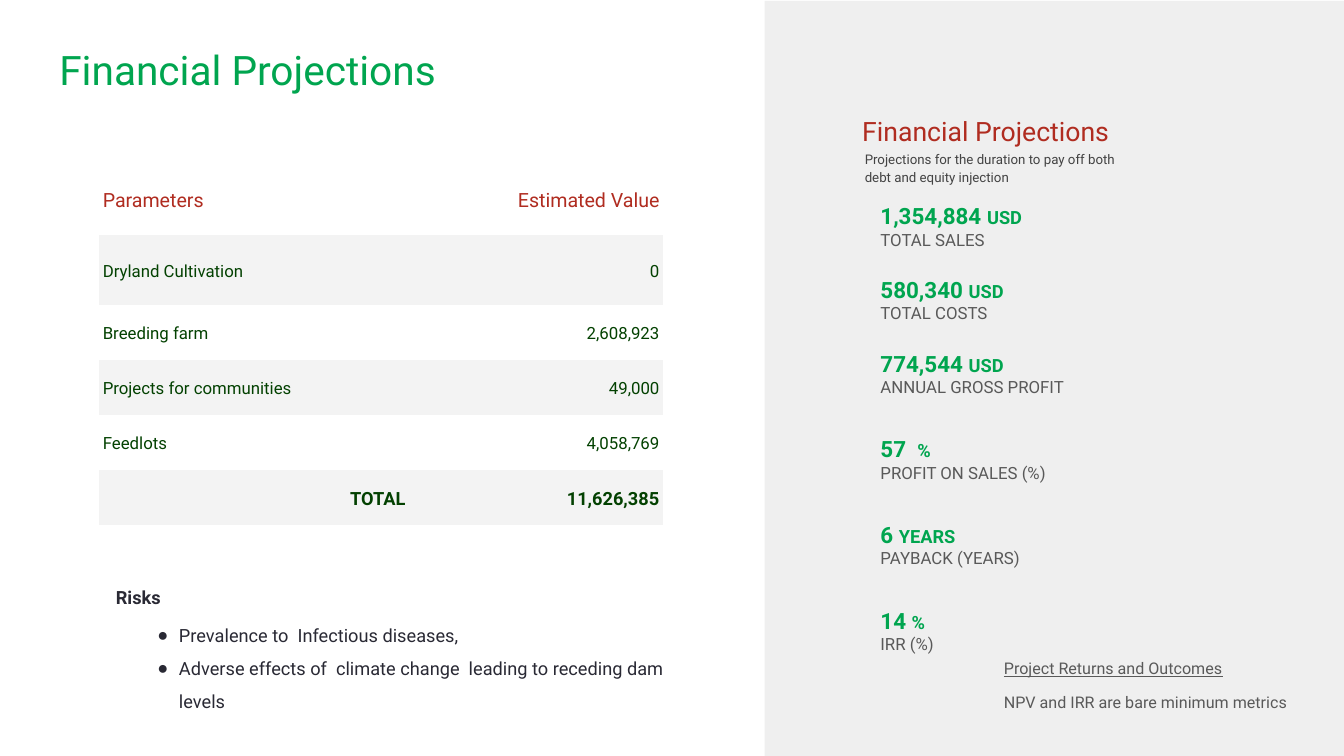
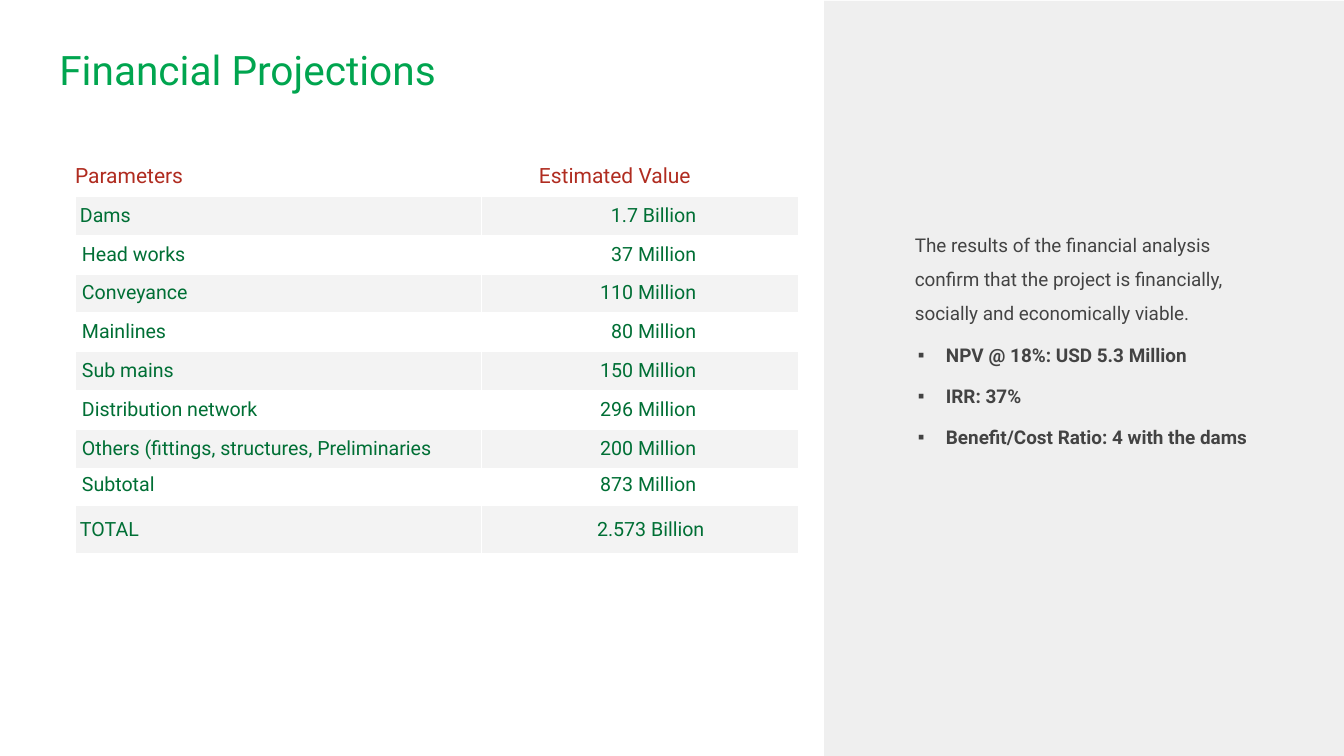
"""Build two slides of financial projections with tables, key figures and notes."""
from dataclasses import dataclass
from itertools import cycle

from lxml.etree import SubElement
from pptx import Presentation
from pptx.dml.color import RGBColor
from pptx.enum.shapes import MSO_SHAPE
from pptx.enum.text import MSO_ANCHOR, MSO_AUTO_SIZE, PP_ALIGN
from pptx.oxml import parse_xml
from pptx.oxml.ns import nsdecls, qn
from pptx.util import Cm, Pt

FONT = "Roboto"
GREEN = "00A54F"
RED = "B02C20"
DARK_GREEN = "034101"
MID_GREEN = "006F35"
GREY = "595959"
DARK_GREY = "434343"
INK = "292934"
WHITE = "FFFFFF"
BAND = "F3F3F3"
PANEL = "9E9E9E"
NO_STYLE = "{2D5ABB26-0587-4C30-8999-92F81FD0307C}"
SLIDE_WIDTH = 67.73
SLIDE_HEIGHT = 38.1


@dataclass
class Style:
    size: float
    color: str
    bold: bool = False
    underline: bool = False


def rgb(color):
    """Turn a hex string into a colour."""
    return RGBColor.from_string(color)


def place(shape, left, top, width, height):
    """Move and size a shape, in centimetres."""
    shape.left, shape.top = Cm(left), Cm(top)
    shape.width, shape.height = Cm(width), Cm(height)


def prepare_frame(frame, inset_x, inset_y, anchor=MSO_ANCHOR.TOP):
    """Set wrapping, insets and anchor of a text frame."""
    frame.word_wrap = True
    frame.auto_size = MSO_AUTO_SIZE.NONE
    frame.vertical_anchor = anchor
    frame.margin_left = frame.margin_right = Cm(inset_x)
    frame.margin_top = frame.margin_bottom = Cm(inset_y)


def set_bullet(paragraph, bullet, color, left, hanging):
    """Give a paragraph a bullet, or none, and its indents."""
    properties = paragraph._p.get_or_add_pPr()
    properties.set("marL", str(Cm(left)))
    properties.set("indent", str(-Cm(hanging)))
    if bullet is None:
        SubElement(properties, qn("a:buNone"))
        return
    bullet_color = SubElement(properties, qn("a:buClr"))
    SubElement(bullet_color, qn("a:srgbClr"), val=color)
    SubElement(properties, qn("a:buFont"), typeface="Arial")
    SubElement(properties, qn("a:buChar"), char=bullet)


def add_paragraph(frame, runs, spacing=1.0, before=0, after=0,
                  align=PP_ALIGN.LEFT, bullet=None, left=0, hanging=0):
    """Write one paragraph of (text, style) runs."""
    first = frame.paragraphs[0]
    paragraph = frame.add_paragraph() if first.runs else first
    set_bullet(paragraph, bullet, runs[0][1].color, left, hanging)
    paragraph.alignment = align
    paragraph.line_spacing = spacing
    paragraph.space_before, paragraph.space_after = Pt(before), Pt(after)
    for text, style in runs:
        run = paragraph.add_run()
        run.text = text
        run.font.name = FONT
        run.font.size = Pt(style.size)
        run.font.bold = style.bold
        run.font.underline = style.underline
        run.font.color.rgb = rgb(style.color)


def add_text_box(slide, box, inset_x, inset_y, anchor=MSO_ANCHOR.TOP):
    """Add an empty text box and return its frame."""
    frame = slide.shapes.add_textbox(*map(Cm, box)).text_frame
    prepare_frame(frame, inset_x, inset_y, anchor)
    return frame


def use_body(slide, box, inset_x, inset_y):
    """Move the body placeholder and return its frame."""
    body = slide.placeholders[1]
    place(body, *box)
    prepare_frame(body.text_frame, inset_x, inset_y)
    return body.text_frame


def add_panel(slide, left):
    """Add the translucent grey band from left to the slide edge."""
    panel = slide.shapes.add_shape(
        MSO_SHAPE.RECTANGLE, Cm(left), Cm(0.05),
        Cm(SLIDE_WIDTH - left), Cm(SLIDE_HEIGHT - 0.05))
    panel.shadow.inherit = False
    panel.fill.solid()
    panel.fill.fore_color.rgb = rgb(PANEL)
    panel.line.fill.background()
    color = panel._element.spPr.find(".//" + qn("a:srgbClr"))
    SubElement(color, qn("a:alpha"), val="16000")
    slide.shapes._spTree.insert(2, panel._element)


def add_projection_slide(presentation, panel_left, title_width):
    """Add a slide with the shared title and side panel."""
    slide = presentation.slides.add_slide(presentation.slide_layouts[1])
    title = slide.shapes.title
    place(title, 2.31, 1.6, title_width, 4.24)
    prepare_frame(title.text_frame, 0.68, 0.68)
    add_paragraph(title.text_frame, [("Financial Projections", Style(58, GREEN))])
    add_panel(slide, panel_left)
    return slide


def add_plain_table(slide, left, top, widths, heights):
    """Add a table without style and return it."""
    table = slide.shapes.add_table(
        len(heights), len(widths), Cm(left), Cm(top),
        Cm(sum(widths)), Cm(sum(heights))).table
    table.first_row = table.horz_banding = False
    table._tbl.tblPr.find(qn("a:tableStyleId")).text = NO_STYLE
    for column, width in zip(table.columns, widths):
        column.width = Cm(width)
    for row, height in zip(table.rows, heights):
        row.height = Cm(height)
    return table


def add_white_borders(cell):
    """Draw thin white lines around a cell."""
    properties = cell._tc.get_or_add_tcPr()
    for index, side in enumerate(("lnL", "lnR", "lnT", "lnB")):
        properties.insert(index, parse_xml(
            f'<a:{side} {nsdecls("a")} w="9525"><a:solidFill>'
            f'<a:srgbClr val="{WHITE}"/></a:solidFill></a:{side}>'))


def fill_cell(cell, text, style, fill, align, margins, spacing=1.0):
    """Write and colour one cell; margins are left, right and vertical."""
    left, right, vertical = map(Cm, margins)
    cell.margin_left, cell.margin_right = left, right
    cell.margin_top = cell.margin_bottom = vertical
    cell.vertical_anchor = MSO_ANCHOR.MIDDLE
    cell.fill.solid()
    cell.fill.fore_color.rgb = rgb(fill)
    if text:
        add_paragraph(cell.text_frame, [(text, style)], spacing, align=align)


def add_farm_table(slide):
    """Add the table of farm investments with its total."""
    header, entry = Style(28, RED), Style(24, DARK_GREEN)
    total = Style(26, DARK_GREEN, bold=True)
    left, right = PP_ALIGN.LEFT, PP_ALIGN.RIGHT
    rows = [
        ("Parameters", "Estimated Value", header, left),
        ("Dryland Cultivation", "0", entry, left),
        ("Breeding farm", "2,608,923", entry, left),
        ("Projects for communities", "49,000", entry, left),
        ("Feedlots", "4,058,769", entry, left),
        ("TOTAL", "11,626,385", total, right),
    ]
    table = add_plain_table(slide, 4.98, 8.26, [15.65, 12.8],
                            [3.56] * 2 + [2.77] * 4)
    for row, (name, value, style, align), fill in zip(
            table.rows, rows, cycle((WHITE, BAND))):
        for cell, text, side in zip(row.cells, (name, value), (align, right)):
            fill_cell(cell, text, style, fill, side, (0.2, 0.2, 0.15), 1.15)


def add_water_table(slide):
    """Add the table of water works costs with its total."""
    header, entry = Style(30, RED), Style(28, MID_GREEN)
    rows = [
        ("Parameters", "Estimated Value", header, 0, 5.4),
        ("Dams", "1.7 Billion", entry, 0.25, 5.13),
        ("Head works", "37 Million", entry, 0.35, 5.13),
        ("Conveyance", "110 Million", entry, 0.35, 5.13),
        ("Mainlines", "80 Million", entry, 0.35, 5.13),
        ("Sub mains", "150 Million", entry, 0.35, 5.13),
        ("Distribution network", "296 Million", entry, 0.35, 5.13),
        ("Others (fittings, structures, Preliminaries", "200 Million",
         entry, 0.35, 5.13),
        ("Subtotal", "873 Million", entry, 0.35, 5.13),
        ("TOTAL", "2.573 Billion", entry, 0.25, 4.72),
    ]
    table = add_plain_table(slide, 3.78, 7.92, [20.45, 15.98],
                            [1.96] * 8 + [1.88, 2.41])
    for row, (name, value, style, indent, gap), fill in zip(
            table.rows, rows, cycle((WHITE, BAND))):
        spacing = 0.62 if name == "Subtotal" else 1.0
        name_cell, value_cell = row.cells
        fill_cell(name_cell, name, style, fill, PP_ALIGN.LEFT,
                  (indent, 0, 0), spacing)
        fill_cell(value_cell, value, style, fill, PP_ALIGN.RIGHT,
                  (0, gap, 0), spacing)
        add_white_borders(name_cell)
        add_white_borders(value_cell)


def add_key_figures(slide):
    """Stack the key figures down the side panel."""
    figures = [
        ("1,354,884 ", "USD", "TOTAL SALES", 2.95),
        ("580,340 ", "USD", "TOTAL COSTS", 2.95),
        ("774,544 ", "USD", "ANNUAL GROSS PROFIT", 3.56),
        ("57  ", "%", "PROFIT ON SALES (%)", 3.56),
        ("6 ", "YEARS", "PAYBACK (YEARS)", 3.56),
        ("14 ", "%", "IRR (%)", 3.56),
    ]
    top = 9.86
    for number, unit, label, height in figures:
        frame = add_text_box(slide, (43.69, top, 13.13, height), 0.68, 0.34)
        add_paragraph(frame, [(number, Style(32, GREEN, bold=True)),
                              (unit, Style(26, GREEN, bold=True))])
        add_paragraph(frame, [(label, Style(24, GREY))])
        top += height + 0.76


def add_panel_notes(slide):
    """Add the heading, subheading and closing note of the side panel."""
    heading = add_text_box(slide, (42.77, 4.88, 21.06, 3), 0.68, 0.68)
    add_paragraph(heading, [("Financial Projections", Style(38, RED))], 1.15)
    subheading = add_text_box(slide, (43.33, 7.49, 13.54, 1.88), 0.25, 0.25,
                              MSO_ANCHOR.MIDDLE)
    add_paragraph(subheading, [(
        "Projections for the duration to pay off both debt and equity injection",
        Style(19, DARK_GREY))], 1.15)
    note = add_text_box(slide, (50.34, 32.44, 16.28, 3.25), 0.25, 0.25)
    add_paragraph(note, [("Project Returns and Outcomes",
                          Style(23, GREY, underline=True))], 1.5)
    add_paragraph(note, [("NPV and IRR are bare minimum metrics",
                          Style(23, GREY))], 1.5, before=8)


def add_risks(slide):
    """Write the list of risks in the body placeholder."""
    frame = use_body(slide, (5.59, 28.75, 29.36, 6.91), 0.25, 0.25)
    add_paragraph(frame, [("Risks", Style(26, INK, bold=True))], 1.5)
    risks = [
        ("Prevalence to  Infectious diseases,", 8),
        ("Adverse effects of  climate change  leading to receding dam levels", 0),
    ]
    for risk, before in risks:
        add_paragraph(frame, [(risk, Style(26, INK))], 1.5, before,
                      bullet="●", left=3.18, hanging=1.09)


def add_results(slide):
    """Write the results of the analysis in the body placeholder."""
    frame = use_body(slide, (45.59, 10.97, 18.21, 15.52), 0.51, 0.25)
    add_paragraph(frame, [(
        "The results of the financial analysis confirm that the project is "
        "financially, socially and economically viable.",
        Style(27, DARK_GREY))], 1.5)
    for result in ("NPV @ 18%: USD 5.3 Million", "IRR: 37%",
                   "Benefit/Cost Ratio: 4 with the dams"):
        add_paragraph(frame, [(result, Style(27, DARK_GREY, bold=True))], 1.5,
                      before=10, bullet="▪", left=1.57, hanging=1.42)


def main():
    """Build and save the presentation."""
    presentation = Presentation()
    presentation.slide_width = Cm(SLIDE_WIDTH)
    presentation.slide_height = Cm(SLIDE_HEIGHT)

    farm_slide = add_projection_slide(presentation, 38.53, 63.12)
    add_farm_table(farm_slide)
    add_key_figures(farm_slide)
    add_panel_notes(farm_slide)
    add_risks(farm_slide)

    water_slide = add_projection_slide(presentation, 41.53, 52.96)
    add_water_table(water_slide)
    add_results(water_slide)

    presentation.save("out.pptx")


if __name__ == "__main__":
    main()
